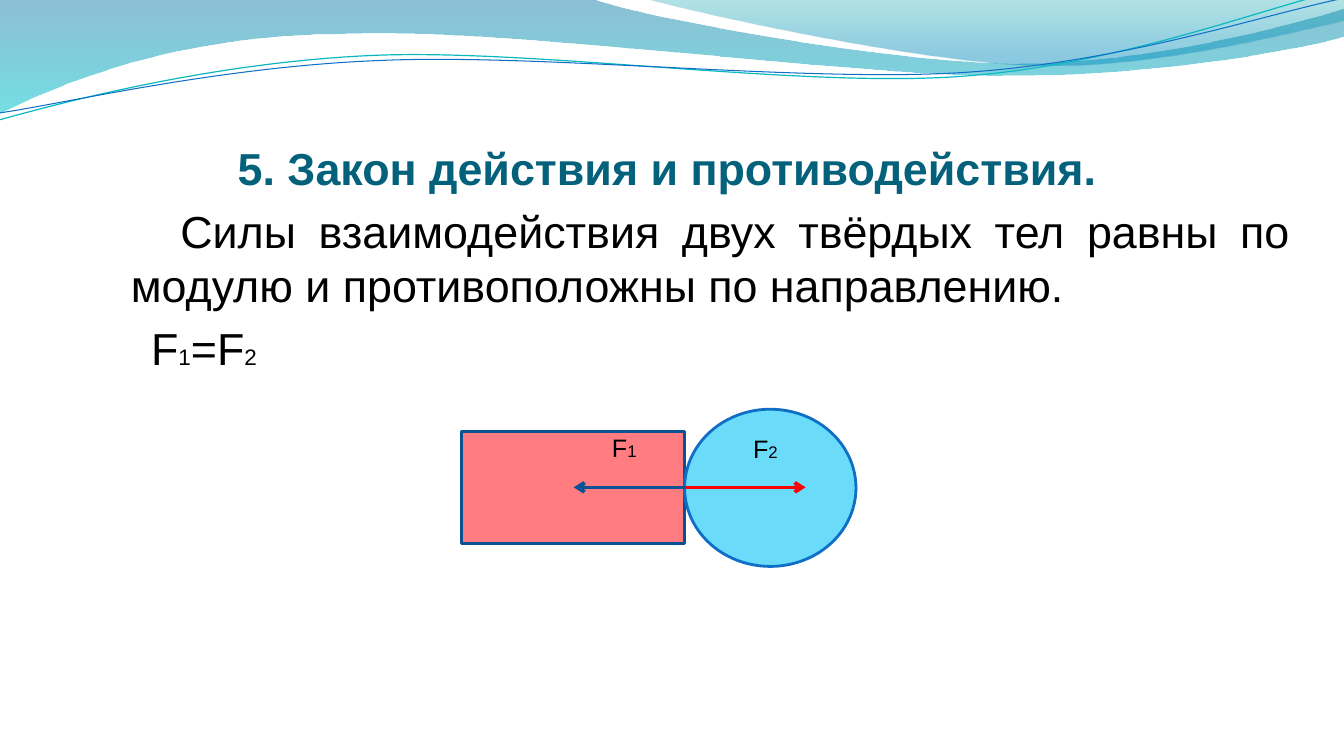
from dataclasses import dataclass

from lxml import etree
from pptx import Presentation
from pptx.dml.color import RGBColor
from pptx.enum.shapes import MSO_CONNECTOR, MSO_SHAPE
from pptx.enum.text import PP_ALIGN
from pptx.oxml.ns import qn
from pptx.util import Pt

RECT, OVAL = MSO_SHAPE.RECTANGLE, MSO_SHAPE.OVAL
STRAIGHT = MSO_CONNECTOR.STRAIGHT
LEFT, JUSTIFY = PP_ALIGN.LEFT, PP_ALIGN.JUSTIFY
RIGHT_SIDE = 3
PX = 9144


@dataclass(frozen=True)
class Theme:
    font: str = "Arial"
    title: str = "04617B"
    text: str = "000000"
    block: str = "FF7C80"
    block_line: str = "0B5292"
    ball: str = "6BDBFA"
    ball_line: str = "0F6FC6"
    force_left: str = "095295"
    force_right: str = "FF0000"
    teal_line: str = "0AB8BF"
    wave: tuple = ((0, "0074A1", 45), (1, "00C6CF", 55))
    crest: tuple = ((0, "00A1A9", 30), (0.8, "008BBF", 45))
    body_size: int = 32
    body_sub: int = 16
    label_size: int = 18
    label_sub: int = 12
    space: float = 6.4


T = Theme()


def px(n):
    return round(n * PX)


def rgb(code):
    return RGBColor.from_string(code)


def add_text(tf, runs, color=T.text, bold=False, align=LEFT, margin=0,
             indent=0, before=0, first=False):
    p = tf.paragraphs[0] if first else tf.add_paragraph()
    pPr = p._p.get_or_add_pPr()
    pPr.set("marL", str(px(margin)))
    pPr.set("indent", str(px(indent)))
    p.alignment = align
    p.space_before = Pt(before)
    for text, size in runs:
        r = p.add_run()
        r.text = text
        r.font.name = T.font
        r.font.size = Pt(size)
        r.font.bold = bold
        r.font.color.rgb = rgb(color)


def add_outline(s, box, start, segments, closed):
    x, y = box
    points = [(px(x + seg[i]), px(y + seg[i + 1]))
              for seg in [start] + segments for i in range(0, len(seg), 2)]
    fb = s.shapes.build_freeform(*points[0], scale=1.0)
    fb.add_line_segments(points[1:], close=closed)
    sp = fb.convert_to_shape()
    sp.shadow.inherit = False
    steps = iter(list(sp._element.spPr.iter(qn("a:lnTo"))))
    for seg in segments:
        step = next(steps)
        if len(seg) == 6:
            curve = etree.Element(qn("a:cubicBezTo"))
            step.addprevious(curve)
            for part in (step, next(steps), next(steps)):
                curve.append(part[0])
                part.getparent().remove(part)
    return sp


def add_wave(s, box, start, segments, stops):
    sp = add_outline(s, box, start, segments, True)
    sp.line.fill.background()
    sp.fill.gradient()
    sp.fill.gradient_angle = 270
    for stop, (position, color, _) in zip(sp.fill.gradient_stops, stops):
        stop.position = position
        stop.color.rgb = rgb(color)
    colors = sp._element.spPr.iter(qn("a:srgbClr"))
    for clr, (_, _, opacity) in zip(colors, stops):
        etree.SubElement(clr, qn("a:alpha")).set("val", str(opacity * 1000))


def add_strand(s, box, start, segments, color, width):
    sp = add_outline(s, box, start, segments, False)
    sp.fill.background()
    sp.line.color.rgb = rgb(color)
    sp.line.width = Pt(width)


def add_header(s, box):
    add_wave(s, box, (0, -1), [
        (587, -1),
        (634, 17, 885, 63, 1011, 63),
        (1138, 63, 1278, 26, 1333, 9),
        (1335, 36),
        (1311, 44, 1160, 76, 994, 75),
        (829, 75, 509, 28, 343, 34),
        (172, 35, 61, 83, -1, 113)], T.wave)
    add_wave(s, box, (639, -1), [
        (679, 11, 909, 62, 1025, 65),
        (1141, 69, 1282, 32, 1333, 21),
        (1333, 0)], T.crest)
    add_strand(s, box, (-1, 119), [
        (64, 101, 211, 62, 369, 55),
        (527, 48, 790, 87, 950, 76),
        (1110, 65, 1252, 8, 1331, -10)], T.teal_line, 0.85)
    add_strand(s, box, (0, 112), [
        (63, 103, 218, 66, 378, 60),
        (537, 53, 796, 82, 955, 72),
        (1115, 62, 1255, 14, 1334, -2)], T.ball_line, 0.75)


def add_body(s, box):
    tf = s.shapes.add_textbox(*map(px, box)).text_frame
    tf.word_wrap = True
    size, sub = T.body_size, T.body_sub
    add_text(tf, [("5. Закон действия и противодействия.", size)],
             color=T.title, bold=True, margin=136, first=True)
    add_text(tf, [("Силы взаимодействия двух твёрдых тел равны по модулю "
                   "и противоположны по направлению.", size)],
             align=JUSTIFY, margin=30, indent=49, before=T.space)
    add_text(tf, [("F", size), ("1", sub), ("=F", size), ("2", sub)],
             margin=50, before=T.space)


def add_solid(s, kind, box, fill, line):
    sp = s.shapes.add_shape(kind, *map(px, box))
    sp.shadow.inherit = False
    sp.fill.solid()
    sp.fill.fore_color.rgb = rgb(fill)
    sp.line.color.rgb = rgb(line)
    sp.line.width = Pt(2)
    return sp


def add_force(s, block, start, end, color):
    cx = s.shapes.add_connector(STRAIGHT, *map(px, start + end))
    cx.begin_connect(block, RIGHT_SIDE)
    cx.end_y = cx.begin_y
    cx.line.color.rgb = rgb(color)
    cx.line.width = Pt(2.5)
    etree.SubElement(cx.line._get_or_add_ln(), qn("a:tailEnd")).set("type", "arrow")
    etree.SubElement(cx._element.spPr, qn("a:effectLst"))


def add_label(s, box, index):
    tf = s.shapes.add_textbox(*map(px, box)).text_frame
    tf.word_wrap = False
    add_text(tf, [("F", T.label_size), (index, T.label_sub)], first=True)


def add_diagram(s, box):
    x, y, w, h = box
    block = add_solid(s, RECT, (x, y + 22, 221, 111), T.block, T.block_line)
    add_solid(s, OVAL, (x + 221, y, w - 221, h), T.ball, T.ball_line)
    contact = (x + 221, y + 78)
    for reach, color in ((-110, T.force_left), (120, T.force_right)):
        add_force(s, block, contact, (contact[0] + reach, contact[1]), color)
    add_label(s, (x + 139, y + 18, 45, 40), "1")
    add_label(s, (x + 279, y + 19, 45, 40), "2")


def main():
    prs = Presentation()
    prs.slide_width, prs.slide_height = px(1333), px(750)
    s = prs.slides.add_slide(prs.slide_layouts[6])
    add_header(s, (0, 0))
    add_body(s, (90, 135, 1200, 480))
    add_diagram(s, (458, 406, 391, 156))
    prs.save("out.pptx")


if __name__ == "__main__":
    main()
